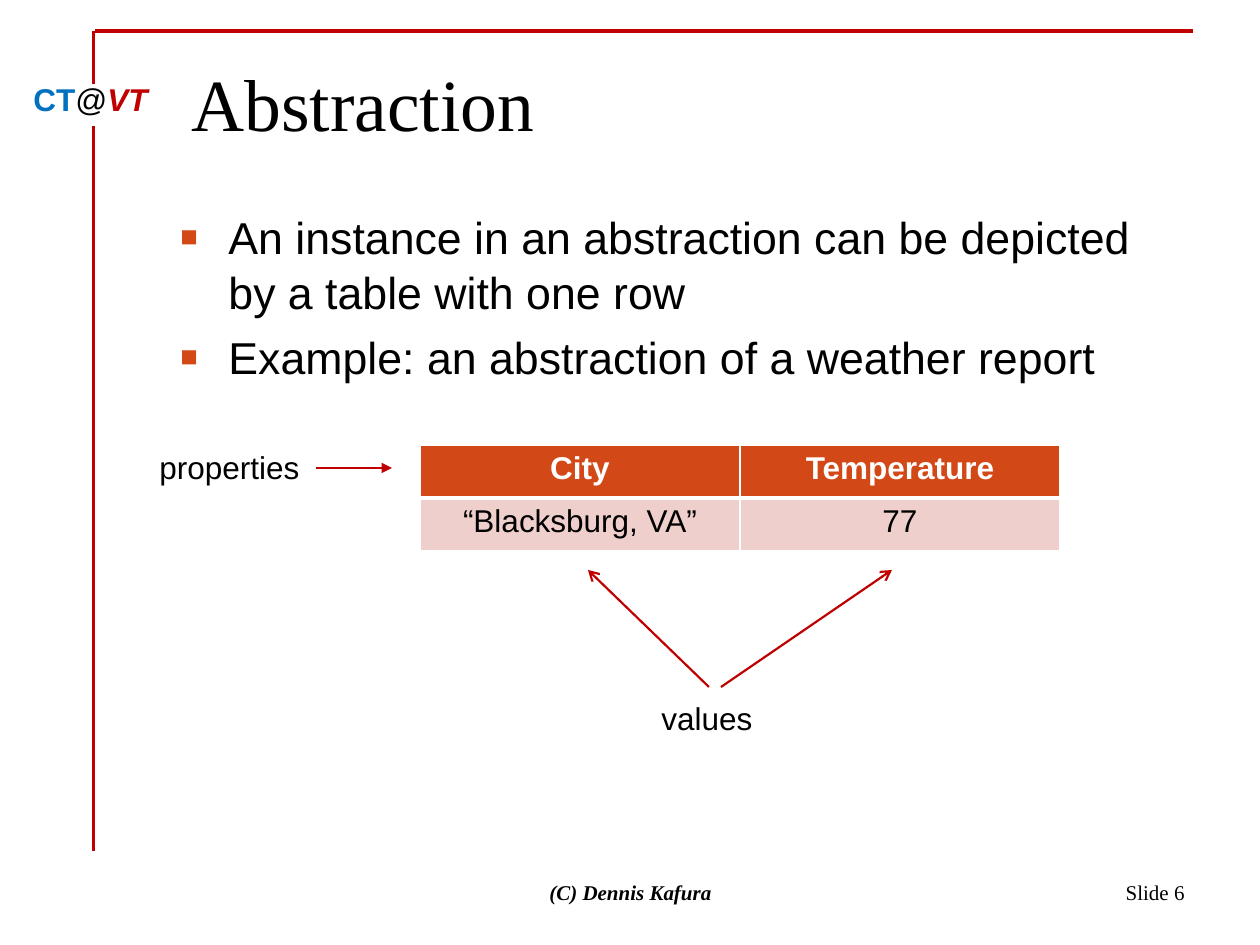
"""Build the Abstraction slide: bullets, a one-row table and labelled arrows."""
from lxml import etree
from pptx import Presentation
from pptx import util as u
from pptx.dml.color import RGBColor
from pptx.enum import shapes, text
from pptx.oxml import ns

SCALE = 914400 / 126
SANS, SERIF = "Arial", "Times New Roman"
COLORS = {"black": "000000", "white": "FFFFFF", "red": "C00000",
          "blue": "0070C0", "orange": "D34817", "pink": "EFCFCC"}
LEFT, CENTER, RIGHT = text.PP_ALIGN.LEFT, text.PP_ALIGN.CENTER, text.PP_ALIGN.RIGHT
TOP, MIDDLE = text.MSO_ANCHOR.TOP, text.MSO_ANCHOR.MIDDLE

TITLE = "Abstraction"
BULLETS = ["An instance in an abstraction can be depicted by a table with one row",
           "Example: an abstraction of a weather report"]
TABLE = [("City", "Temperature"), ("“Blacksburg, VA”", "77")]
BADGE = [("CT", "blue", True, False), ("@", "black", False, False), ("VT", "red", True, True)]
LABELS = [("properties", (147, 442, 166, 50)), ("values", (649, 693, 117, 50))]
FOOTERS = [("(C) Dennis Kafura", (431, 861, 399, 63), CENTER, True),
           ("Slide 6", (903, 861, 294, 63), RIGHT, False)]
LINES = [((95, 31), (1193, 31), 2, None),
         ((94, 31), (94, 84), 1.75, None),
         ((94, 126), (94, 851), 1.75, None),
         ((709, 687), (588, 570), 1.25, "arrow"),
         ((721, 687), (892, 570), 1.25, "arrow"),
         ((316, 468), (392, 468), 1.25, "triangle")]


def px(value):
    return u.Emu(round(value * SCALE))


def rgb(name):
    return RGBColor.from_string(COLORS[name])


def add_run(para, words, size, face=SANS, color="black", bold=False, italic=False):
    span = para.add_run()
    span.text = words
    font = span.font
    font.name, font.size, font.bold, font.italic = face, u.Pt(size), bold, italic
    font.color.rgb = rgb(color)


def add_box(page, place, wrap=True, anchor=TOP, align=LEFT):
    frame = page.shapes.add_textbox(*map(px, place)).text_frame
    frame.word_wrap, frame.vertical_anchor = wrap, anchor
    frame.paragraphs[0].alignment = align
    return frame


def add_line(page, start, end, width, head):
    line = page.shapes.add_connector(shapes.MSO_CONNECTOR.STRAIGHT, *map(px, start + end))
    line.line.color.rgb = rgb("red")
    line.line.width = u.Pt(width)
    if head:
        etree.SubElement(line.line._get_or_add_ln(), ns.qn("a:tailEnd"), type=head)
    etree.SubElement(line._element.spPr, ns.qn("a:effectLst"))


def add_bullet(para):
    props = para._p.get_or_add_pPr()
    props.set("marL", str(px(48)))
    props.set("indent", str(-px(48)))
    color = etree.SubElement(props, ns.qn("a:buClr"))
    etree.SubElement(color, ns.qn("a:srgbClr"), val=COLORS["orange"])
    etree.SubElement(props, ns.qn("a:buSzPct"), val="65000")
    etree.SubElement(props, ns.qn("a:buFont"), typeface=SANS)
    etree.SubElement(props, ns.qn("a:buChar"), char="■")


def set_borders(cell, widths):
    props = cell._tc.get_or_add_tcPr()
    for index, (side, width) in enumerate(zip("LRTB", widths)):
        line = etree.Element(ns.qn(f"a:ln{side}"), w=str(u.Pt(width)))
        fill = etree.SubElement(line, ns.qn("a:solidFill"))
        etree.SubElement(fill, ns.qn("a:srgbClr"), val=COLORS["white"])
        props.insert(index, line)


def add_table(page):
    table = page.shapes.add_table(2, 2, *map(px, (420, 445, 640, 106))).table
    looks = [("orange", "white", True, (1, 1, 1, 3)), ("pink", "black", False, (1, 1, 3, 1))]
    for r, (row, (fill, color, bold, widths)) in enumerate(zip(TABLE, looks)):
        for c, words in enumerate(row):
            cell = table.cell(r, c)
            cell.fill.solid()
            cell.fill.fore_color.rgb = rgb(fill)
            set_borders(cell, widths)
            para = cell.text_frame.paragraphs[0]
            para.alignment = CENTER
            add_run(para, words, 18, color=color, bold=bold)


def main():
    deck = Presentation()
    deck.slide_width, deck.slide_height = px(1260), px(945)
    page = deck.slides.add_slide(deck.slide_layouts[5])

    title = page.shapes.title
    title.left, title.top, title.width, title.height = map(px, (179, 44, 1018, 98))
    frame = title.text_frame
    frame.vertical_anchor, frame.margin_top = TOP, px(14)
    frame.auto_size = text.MSO_AUTO_SIZE.NONE
    frame.paragraphs[0].alignment = LEFT
    add_run(frame.paragraphs[0], TITLE, 42, SERIF)

    for line in LINES:
        add_line(page, *line)

    badge = add_box(page, (21, 74, 141, 50), wrap=False)
    for words, color, bold, italic in BADGE:
        add_run(badge.paragraphs[0], words, 18, SANS, color, bold, italic)

    body = add_box(page, (168, 198, 987, 168))
    body.margin_top = px(10)
    for index, words in enumerate(BULLETS):
        para = body.add_paragraph() if index else body.paragraphs[0]
        add_bullet(para)
        para.line_spacing = 1.03
        para.space_before = u.Pt(5.5 if index else 0)
        add_run(para, words, 25.5)

    add_table(page)
    for words, place in LABELS:
        add_run(add_box(page, place, wrap=False).paragraphs[0], words, 18)
    for words, place, align, strong in FOOTERS:
        frame = add_box(page, place, anchor=MIDDLE, align=align)
        add_run(frame.paragraphs[0], words, 12, SERIF, bold=strong, italic=strong)

    deck.save("out.pptx")


if __name__ == "__main__":
    main()
